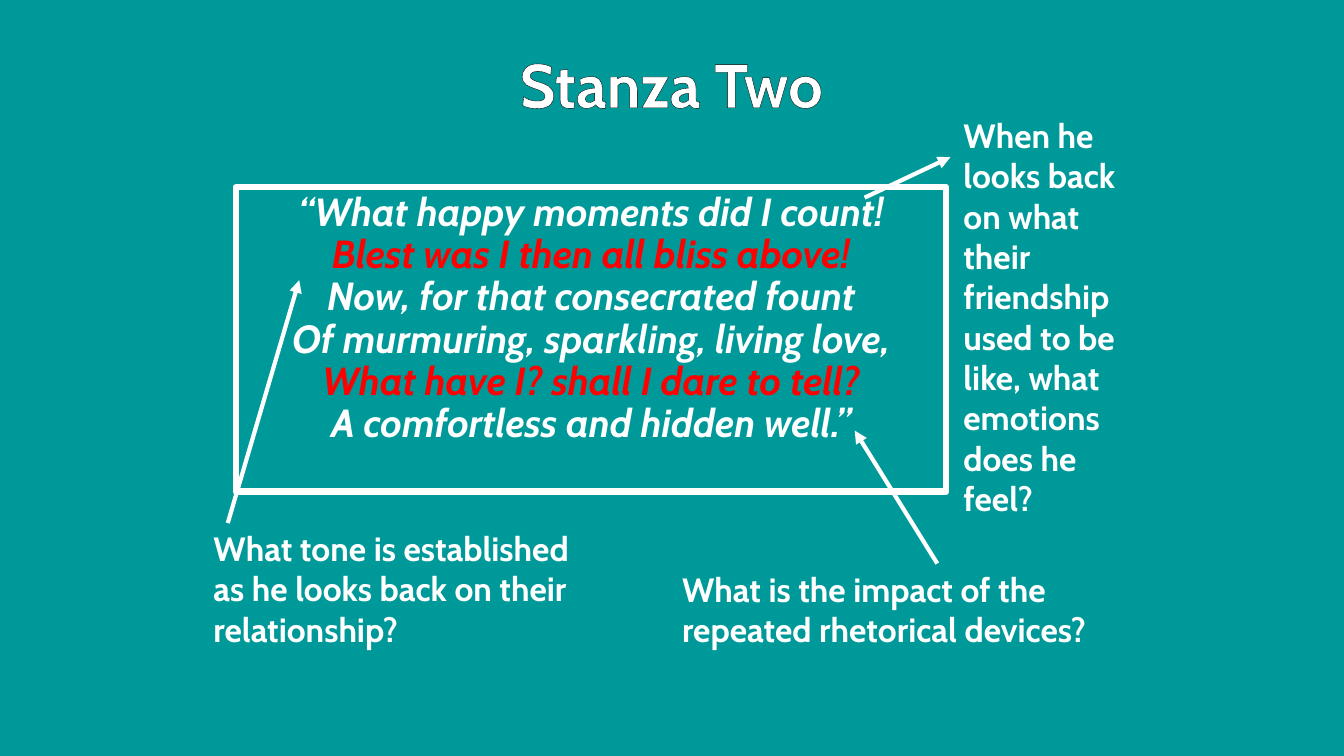
from lxml.etree import SubElement
from pptx import Presentation
from pptx.dml.color import RGBColor
from pptx.enum.shapes import MSO_CONNECTOR, MSO_SHAPE
from pptx.enum.text import MSO_ANCHOR, PP_ALIGN
from pptx.oxml import parse_xml
from pptx.oxml.ns import nsdecls, qn
from pptx.util import Cm, Pt

TEAL = RGBColor(0x00, 0x99, 0x99)
WHITE = RGBColor(0xFF, 0xFF, 0xFF)
RED = RGBColor(0xFF, 0x00, 0x00)
FONT = "Cabin"

POEM = [
    ("“What happy moments did I count!", WHITE),
    ("Blest was I then all bliss above!", RED),
    ("Now, for that consecrated fount", WHITE),
    ("Of murmuring, sparkling, living love,", WHITE),
    ("What have I? shall I dare to tell?", RED),
    ("A comfortless and hidden well.”", WHITE),
]

# Text, box (left, top, width, height), arrow tail and tip from the box corner
ASKS = [
    ("When he looks back on what their friendship used to be like, "
     "what emotions does he feel?",
     (24.03, 2.77, 5.05, 10.52), (-2.24, 2.21), (-0.08, 1.19)),
    ("What tone is established as he looks back on their relationship?",
     (5.13, 13.18, 10.39, 3.33), (0.61, 0), (2.41, -6.12)),
    ("What is the impact of the repeated rhetorical devices?",
     (16.94, 14.2, 12.7, 2.31), (6.68, 0), (4.6, -3.35)),
]


def write(para, text, size=24, color=WHITE, italic=False):
    run = para.add_run()
    run.text = text
    font = run.font
    font.name, font.size = FONT, Pt(size)
    font.bold, font.italic = True, italic
    font.color.rgb = color
    return run


def add_box(slide, box):
    frame = slide.shapes.add_textbox(*map(Cm, box)).text_frame
    frame.word_wrap = True
    return frame.paragraphs[0]


def add_title(slide, box):
    para = add_box(slide, box)
    para.alignment = PP_ALIGN.CENTER
    run = write(para, "Stanza Two", size=44)
    # Thin black outline around the letters
    line = parse_xml(
        f'<a:ln {nsdecls("a")} w="{Pt(1.5)}"><a:solidFill>'
        '<a:srgbClr val="000000"/></a:solidFill></a:ln>')
    run.font._element.insert(0, line)


def add_poem(slide, box):
    shape = slide.shapes.add_shape(MSO_SHAPE.RECTANGLE, *map(Cm, box))
    shape.shadow.inherit = False
    shape.fill.background()
    shape.line.color.rgb = WHITE
    shape.line.width = Pt(4.5)
    frame = shape.text_frame
    frame.word_wrap = True
    frame.vertical_anchor = MSO_ANCHOR.TOP
    para = frame.paragraphs[0]
    para.alignment = PP_ALIGN.CENTER
    para.line_spacing = 0.9
    for num, (text, color) in enumerate(POEM):
        if num:
            para.add_line_break()
        write(para, text, size=28, color=color, italic=True)


def add_arrow(slide, start, end):
    arrow = slide.shapes.add_connector(
        MSO_CONNECTOR.STRAIGHT, *map(Cm, (*start, *end)))
    arrow.line.color.rgb = WHITE
    arrow.line.width = Pt(3)
    SubElement(arrow.line._get_or_add_ln(), qn("a:tailEnd"), type="triangle")
    SubElement(arrow._element.spPr, qn("a:effectLst"))


def add_ask(slide, text, box, tail, tip):
    write(add_box(slide, box), text)
    left, top = box[:2]
    add_arrow(slide, (left + tail[0], top + tail[1]),
              (left + tip[0], top + tip[1]))


def main():
    deck = Presentation()
    deck.slide_width, deck.slide_height = Cm(33.87), Cm(19.05)
    slide = deck.slides.add_slide(deck.slide_layouts[6])
    slide.background.fill.solid()
    slide.background.fill.fore_color.rgb = TEAL

    add_title(slide, (4.22, 1.04, 25.4, 2.13))
    add_poem(slide, (5.94, 4.72, 17.91, 7.67))
    for ask in ASKS:
        add_ask(slide, *ask)
    deck.save("out.pptx")


if __name__ == "__main__":
    main()
